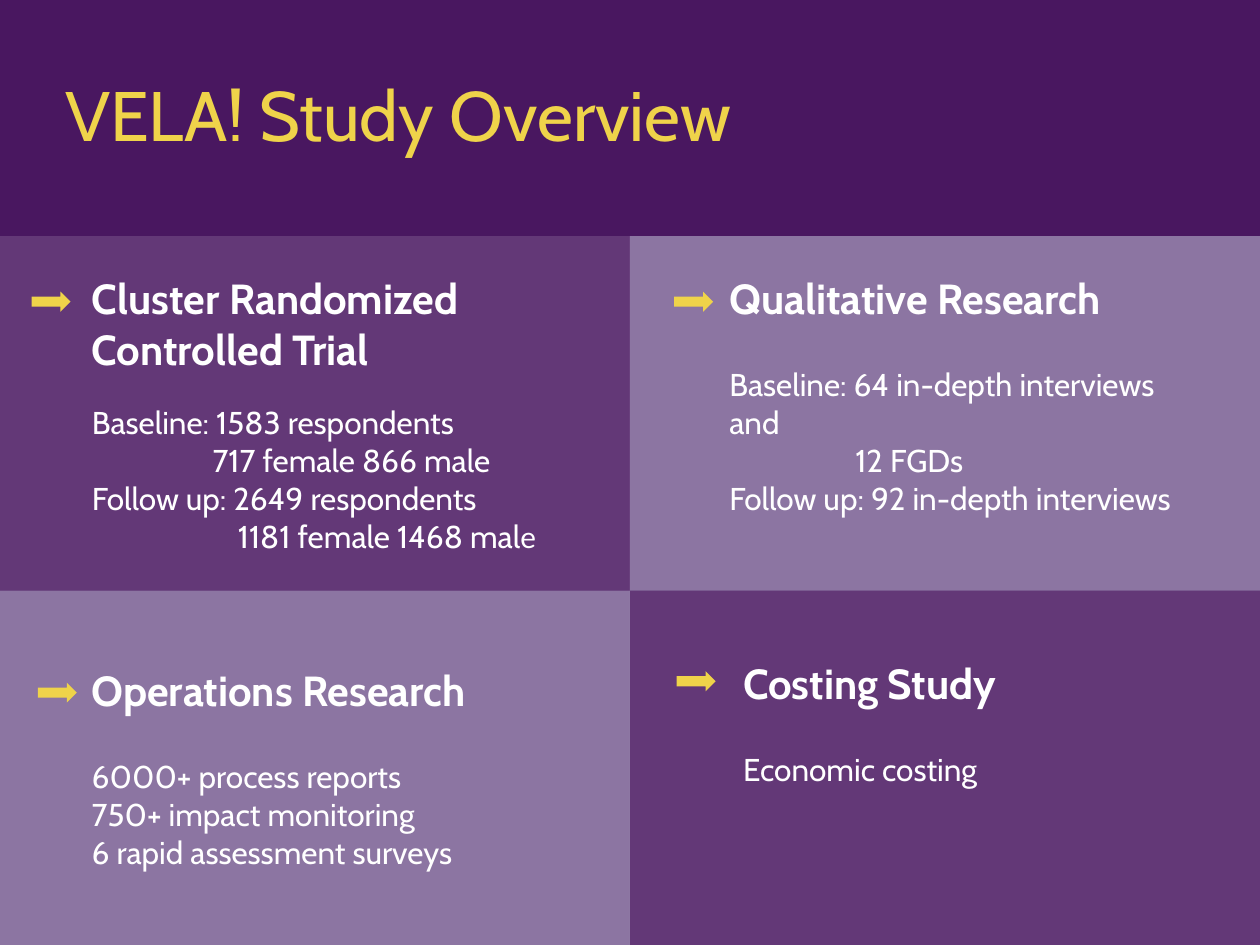
from lxml import etree
from pptx import Presentation
from pptx.dml.color import RGBColor
from pptx.enum.shapes import MSO_SHAPE
from pptx.enum.text import MSO_AUTO_SIZE
from pptx.oxml.ns import qn
from pptx.util import Inches, Pt

RECTANGLE, ARROW = MSO_SHAPE.RECTANGLE, MSO_SHAPE.RIGHT_ARROW
GROW = MSO_AUTO_SIZE.SHAPE_TO_FIT_TEXT

COLORS = {"background": "491760", "accent": "EFD34A", "text": "FFFFFF",
          "lilac": "E6E0EC", "ice": "DCE6F2"}
TINTS = {"dark": ("lilac", 17), "light": ("ice", 46)}
FONT, LAST_LETTER_FONT = "Cabin", "Calibri"
TITLE = "VELA! Study Overview"

WIDTH, HEIGHT = 10, 7.5
HEADER = HEIGHT / 4
PANEL_W, PANEL_H = WIDTH / 2, (HEIGHT - HEADER) / 2
ARROW_W, ARROW_H = 0.31, 0.16

STUDIES = [
    {"cell": (0, 0), "tint": "dark", "box": (0.63, 0.24, 3.91, 2.36),
     "arrow": (0.25, 0.44), "gap": 17,
     "heading": "Cluster Randomized Controlled Trial",
     "lines": [("Baseline: 1583 respondents", 0),
               ("717 female 866 male", 0.96),
               ("Follow up: 2649 respondents", 0),
               ("1181 female 1468 mal", 1.16, "e")]},
    {"cell": (1, 0), "tint": "light", "box": (0.69, 0.24, 3.97, 1.75),
     "arrow": (0.35, 0.44), "gap": 24,
     "heading": "Qualitative Research",
     "lines": [("Baseline: 64 in-depth interviews and", 0),
               ("12 FGDs", 1),
               ("Follow up: 92 in-depth interviews", 0)]},
    {"cell": (0, 1), "tint": "light", "box": (0.63, 0.54, 4.16, 1.75),
     "arrow": (0.3, 0.73), "gap": 24,
     "heading": "Operations Research",
     "lines": [("6000+ process reports", 0),
               ("750+ impact monitoring", 0),
               ("6 rapid assessment surveys", 0)]},
    {"cell": (1, 1), "tint": "dark", "box": (0.8, 0.48, 3.75, 1.14),
     "arrow": (0.37, 0.64), "gap": 24,
     "heading": "Costing Study",
     "lines": [("Economic costing", 0)]},
]


def rgb(name):
    return RGBColor.from_string(COLORS[name])


def add_block(slide, kind, box, color, opacity=100):
    block = slide.shapes.add_shape(kind, *map(Inches, box))
    block.shadow.inherit = False
    block.line.fill.background()
    block.fill.solid()
    block.fill.fore_color.rgb = rgb(color)
    if opacity < 100:
        tone = block.fill._xPr.find(qn("a:solidFill"))[0]
        etree.SubElement(tone, qn("a:alpha")).set("val", str(opacity * 1000))


def add_frame(slide, box):
    frame = slide.shapes.add_textbox(*map(Inches, box)).text_frame
    frame.word_wrap = True
    return frame


def write(paragraph, text, size=18, color="text", bold=False, font=FONT,
          indent=0, before=0):
    run = paragraph.add_run()
    run.text = text
    run.font.name = font
    run.font.size = Pt(size)
    run.font.bold = bold
    run.font.color.rgb = rgb(color)
    if before:
        paragraph.space_before = Pt(before)
    if indent:
        paragraph._p.get_or_add_pPr().set("marL", str(Inches(indent)))


def add_study(slide, study):
    column, row = study["cell"]
    left, top = column * PANEL_W, HEADER + row * PANEL_H
    tint, opacity = TINTS[study["tint"]]
    add_block(slide, RECTANGLE, (left, top, PANEL_W, PANEL_H), tint, opacity)

    x, y, width, height = study["box"]
    frame = add_frame(slide, (left + x, top + y, width, height))
    frame.auto_size = GROW
    write(frame.paragraphs[0], study["heading"], size=24, bold=True)
    for number, (text, indent, *last_letter) in enumerate(study["lines"]):
        paragraph = frame.add_paragraph()
        write(paragraph, text, indent=indent,
              before=0 if number else study["gap"])
        for letter in last_letter:
            write(paragraph, letter, font=LAST_LETTER_FONT)

    x, y = study["arrow"]
    add_block(slide, ARROW, (left + x, top + y, ARROW_W, ARROW_H), "accent")


def main():
    deck = Presentation()
    deck.slide_width, deck.slide_height = Inches(WIDTH), Inches(HEIGHT)
    slide = deck.slides.add_slide(deck.slide_layouts[6])
    slide.background.fill.solid()
    slide.background.fill.fore_color.rgb = rgb("background")

    title = add_frame(slide, (0.42, 0.52, 8.5, 0.93))
    write(title.paragraphs[0], TITLE, size=40, color="accent")
    for study in STUDIES:
        add_study(slide, study)
    deck.save("out.pptx")


if __name__ == "__main__":
    main()
